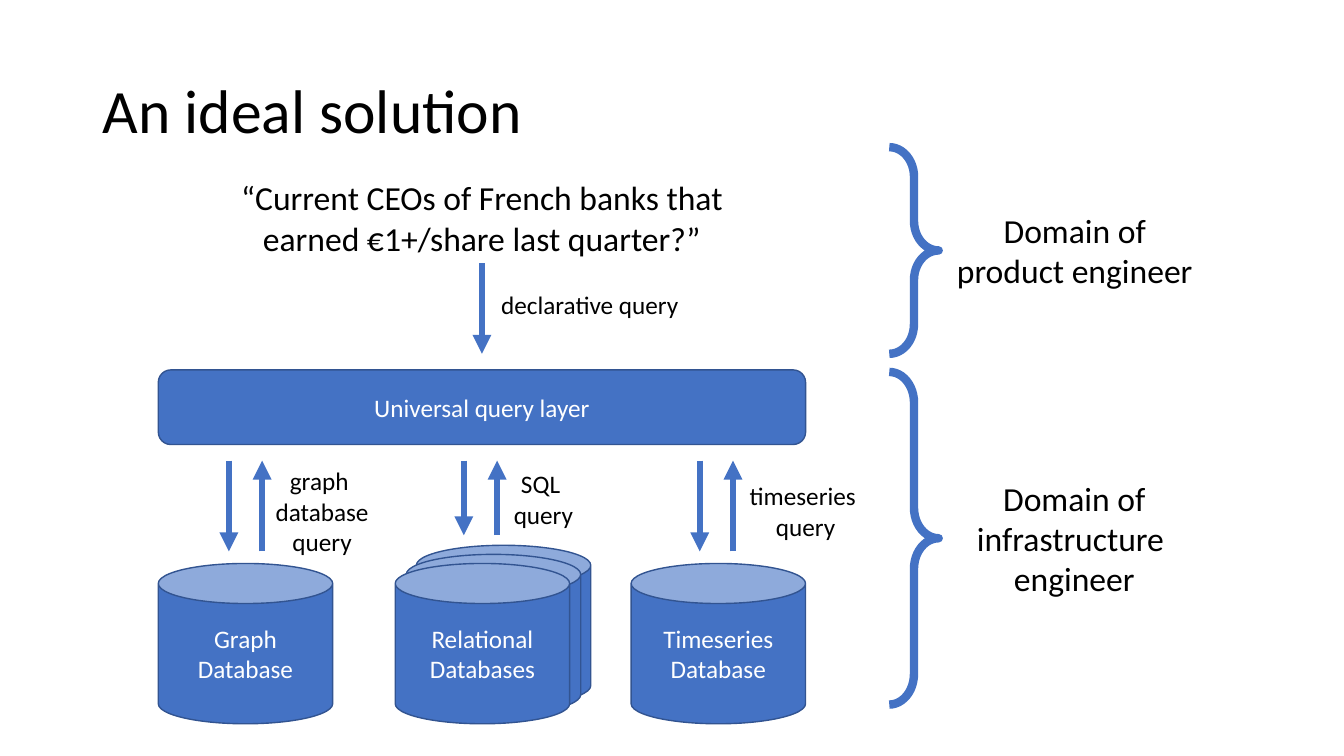
"""Build the slide on a universal query layer above several databases."""
from lxml import etree
from pptx import Presentation
from pptx.dml.color import RGBColor
from pptx.enum import shapes, text
from pptx.oxml.ns import qn
from pptx.util import Inches, Pt

BLUE = RGBColor(0x44, 0x72, 0xC4)
DARK_BLUE = RGBColor(0x32, 0x54, 0x91)
BLACK = RGBColor(0, 0, 0)
WHITE = RGBColor(255, 255, 255)
FONT = "Calibri"

presentation = Presentation()
presentation.slide_width = Inches(13.33)
presentation.slide_height = Inches(7.5)
slide = presentation.slides.add_slide(presentation.slide_layouts[5])


def write(shape, wording, size, color, alignment=text.PP_ALIGN.CENTER):
    frame = shape.text_frame
    frame.text = wording
    paragraph = frame.paragraphs[0]
    paragraph.alignment = alignment
    for run in paragraph.runs:
        run.font.name = FONT
        run.font.size = Pt(size)
        run.font.color.rgb = color


def add_arrow(x, start, end):
    arrow = slide.shapes.add_connector(
        shapes.MSO_CONNECTOR.STRAIGHT, Inches(x), Inches(start), Inches(x), Inches(end))
    arrow.line.color.rgb = BLUE
    arrow.line.width = Pt(4.5)
    etree.SubElement(arrow.line._get_or_add_ln(), qn("a:tailEnd"), type="triangle")
    etree.SubElement(arrow._element.spPr, qn("a:effectLst"))


title = slide.shapes.title
title.left, title.top = Inches(0.92), Inches(0.4)
title.width, title.height = Inches(11.5), Inches(1.45)
write(title, "An ideal solution", 44, BLACK, text.PP_ALIGN.LEFT)
title.text_frame.auto_size = text.MSO_AUTO_SIZE.NONE
title.text_frame.vertical_anchor = text.MSO_ANCHOR.MIDDLE
title.text_frame.paragraphs[0].line_spacing = 0.9

CAN = shapes.MSO_SHAPE.CAN
ROUNDED = shapes.MSO_SHAPE.ROUNDED_RECTANGLE
blocks = [
    (CAN, 4.13, 5.41, 1.73, 1.59, ""),
    (CAN, 4.03, 5.5, 1.73, 1.59, ""),
    (CAN, 1.57, 5.59, 1.73, 1.59, "Graph Database"),
    (CAN, 3.92, 5.59, 1.73, 1.59, "Relational Databases"),
    (CAN, 6.26, 5.59, 1.73, 1.59, "Timeseries Database"),
    (ROUNDED, 1.57, 3.67, 6.42, 0.74, "Universal query layer"),
]
for kind, left, top, width, height, wording in blocks:
    block = slide.shapes.add_shape(
        kind, Inches(left), Inches(top), Inches(width), Inches(height))
    block.shadow.inherit = False
    block.fill.solid()
    block.fill.fore_color.rgb = BLUE
    block.line.color.rgb = DARK_BLUE
    block.line.width = Pt(1)
    block.text_frame.vertical_anchor = text.MSO_ANCHOR.MIDDLE
    if wording:
        write(block, wording, 18, WHITE)

add_arrow(4.78, 2.61, 3.51)
for down_x, bottom in [(2.27, 5.47), (4.6, 5.31), (6.94, 5.47)]:
    add_arrow(down_x, 4.57, bottom)
    add_arrow(down_x + 0.33, bottom, 4.57)

labels = [
    (1.66, 1.71, 6.24, 0.92, 24,
     " “Current CEOs of French banks that \vearned €1+/share last quarter?”"),
    (4.86, 2.82, 1.98, 0.4, 18, "declarative query"),
    (2.63, 4.57, 1.13, 1.01, 18, "graph \vdatabase\vquery"),
    (4.99, 4.6, 0.8, 0.71, 18, "SQL \vquery"),
    (7.33, 4.72, 1.32, 0.71, 18, "timeseries \vquery"),
    (9.38, 2.03, 2.56, 0.91, 24, "Domain of\vproduct engineer"),
    (9.58, 4.69, 2.15, 1.31, 24, "Domain of\vinfrastructure \vengineer"),
]
for left, top, width, height, size, wording in labels:
    label = slide.shapes.add_textbox(
        Inches(left), Inches(top), Inches(width), Inches(height))
    label.text_frame.word_wrap = False
    write(label, wording, size, BLACK)

for top, height, curve in [(1.46, 2.05, 0.6), (3.69, 3.3, 0.62)]:
    brace = slide.shapes.add_shape(
        shapes.MSO_SHAPE.RIGHT_BRACE, Inches(8.82), Inches(top), Inches(0.49), Inches(height))
    brace.shadow.inherit = False
    brace.adjustments[0] = curve
    brace.fill.background()
    brace.line.color.rgb = BLUE
    brace.line.width = Pt(6)

presentation.save("out.pptx")
